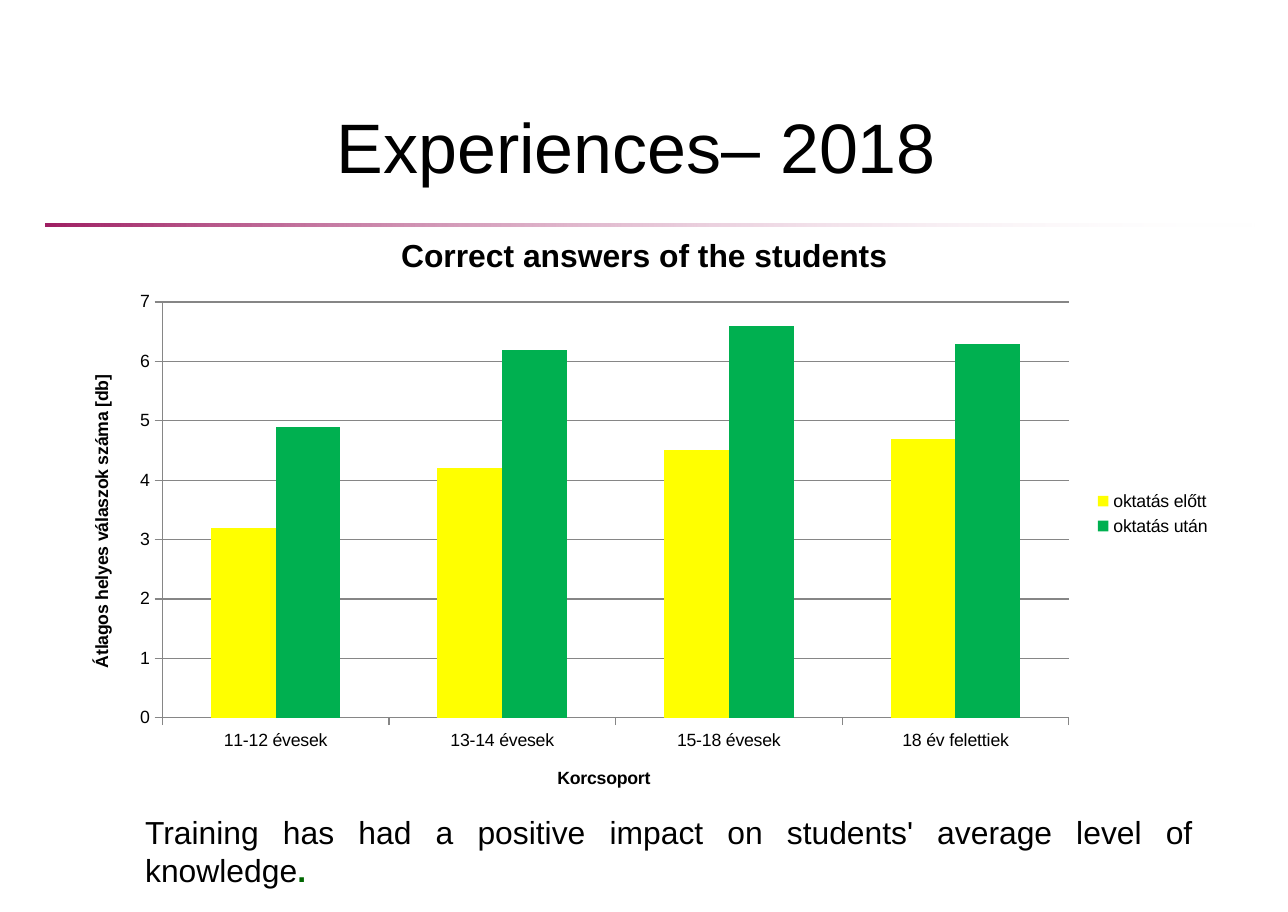
from lxml import etree
from pptx import Presentation
from pptx import util as u
from pptx.chart.data import CategoryChartData
from pptx.dml.color import RGBColor
from pptx.enum import chart as ch, shapes, text
from pptx.oxml.ns import qn

BLACK = RGBColor(0, 0, 0)
WHITE = RGBColor(255, 255, 255)
PLUM = RGBColor(0x9F, 0x1F, 0x63)
DARK_GREEN = RGBColor(0, 0x66, 0)
GREY = RGBColor(0x86, 0x86, 0x86)
YELLOW = RGBColor(255, 255, 0)
GREEN = RGBColor(0, 0xB0, 0x50)
FONT = "Arial"

# Content
TITLE = "Experiences– 2018"
CAPTION = "Training has had a positive impact on students' average level of knowledge"
CHART_TITLE = "Correct answers of the students"
AGE_TITLE = "Korcsoport"
SCORE_TITLE = "Átlagos helyes válaszok száma [db]"
AGES = ["11-12 évesek", "13-14 évesek", "15-18 évesek", "18 év felettiek"]
SERIES = [
    ("oktatás előtt", (3.2, 4.2, 4.5, 4.7), YELLOW),
    ("oktatás után", (4.9, 6.2, 6.6, 6.3), GREEN),
]

# Left, top, width, height as percent of the slide
TITLE_BOX = (2.57, 12.69, 93.68, 6.56)
RULE_BOX = (3.52, 24.55, 94.47, 0.32)
CHART_BOX = (5.04, 23.29, 90.02, 65.97)
CAPTION_BOX = (10.3, 88.4, 83.3, 9.9)

prs = Presentation()
prs.slide_width = u.Cm(25.7)
prs.slide_height = u.Cm(18.2)
s = prs.slides.add_slide(prs.slide_layouts[6])


def place(box):
    sizes = (prs.slide_width, prs.slide_height) * 2
    return [int(size * share / 100) for size, share in zip(sizes, box)]


def style(font, size, bold=False):
    font.name, font.size, font.bold = FONT, u.Pt(size), bold
    font.color.rgb = BLACK


def add_text(box, words, size, align, anchor):
    tf = s.shapes.add_textbox(*place(box)).text_frame
    tf.word_wrap = True
    tf.vertical_anchor = anchor
    p = tf.paragraphs[0]
    p.text = words
    p.alignment = align
    style(p.font, size)
    return p


def set_layout(parent, index, **shares):
    """Fix the place of a chart part, in percent of the chart."""
    for old in parent.findall(qn("c:layout")):
        parent.remove(old)
    layout = etree.Element(qn("c:layout"))
    manual = etree.SubElement(layout, qn("c:manualLayout"))
    if "w" in shares:
        etree.SubElement(manual, qn("c:layoutTarget")).set("val", "inner")
    for mode in ("xMode", "yMode"):
        etree.SubElement(manual, qn("c:" + mode)).set("val", "edge")
    for key, share in shares.items():
        etree.SubElement(manual, qn("c:" + key)).set("val", str(share / 100))
    parent.insert(index, layout)


def add_title(owner, words, size, x, y):
    owner.has_title = True
    title = owner.chart_title if hasattr(owner, "chart_title") else owner.axis_title
    p = title.text_frame.paragraphs[0]
    p.text = words
    style(p.font, size, True)
    set_layout(title._element, 1, x=x, y=y)


# Rule under the title, fading to transparent white
rule = s.shapes.add_shape(shapes.MSO_SHAPE.RECTANGLE, *place(RULE_BOX))
rule.shadow.inherit = False
rule.line.fill.background()
rule.fill.gradient()
rule.fill.gradient_angle = 180
for stop, color in zip(rule.fill.gradient_stops, (WHITE, PLUM)):
    stop.color.rgb = color
clear = rule._element.spPr.find(".//" + qn("a:srgbClr"))
etree.SubElement(clear, qn("a:alpha")).set("val", "0")

# Title
add_text(TITLE_BOX, TITLE, 39.6, text.PP_ALIGN.CENTER, text.MSO_ANCHOR.MIDDLE)

# Chart
data = CategoryChartData()
data.categories = AGES
for name, values, _ in SERIES:
    data.add_series(name, values)
chart = s.shapes.add_chart(
    ch.XL_CHART_TYPE.COLUMN_CLUSTERED, *place(CHART_BOX), data).chart
style(chart.font, 10)
plot = chart.plots[0]
plot.gap_width, plot.overlap, plot.vary_by_categories = 150, 0, False
for series, (_, _, color) in zip(plot.series, SERIES):
    series.format.fill.solid()
    series.format.fill.fore_color.rgb = color

ages, scores = chart.category_axis, chart.value_axis
scores.minimum_scale, scores.maximum_scale, scores.major_unit = 0, 7, 1
scores.has_major_gridlines = True
for axis in (ages, scores):
    axis.major_tick_mark = ch.XL_TICK_MARK.OUTSIDE
    axis.minor_tick_mark = ch.XL_TICK_MARK.NONE
for line in (ages.format.line, scores.format.line, scores.major_gridlines.format.line):
    line.color.rgb = GREY
    line.width = u.Pt(0.75)

add_title(chart, CHART_TITLE, 18, 28.5, 2.7)
add_title(ages, AGE_TITLE, 10, 42.2, 91.5)
add_title(scores, SCORE_TITLE, 10, 1.9, 26.5)
chart.has_legend = True
chart.legend.position = ch.XL_LEGEND_POSITION.RIGHT
chart.legend.include_in_layout = False
set_layout(chart.legend._element, 1, x=88.6, y=45.5)
plot_area = chart._chartSpace.find(".//" + qn("c:plotArea"))
set_layout(plot_area, 0, x=8.4, y=14.9, w=78.2, h=69.1)

# Caption with a green full stop
p = add_text(CAPTION_BOX, CAPTION, 18, text.PP_ALIGN.JUSTIFY, text.MSO_ANCHOR.TOP)
r = p.add_run()
r.text = "."
r.font.bold = True
r.font.color.rgb = DARK_GREEN

prs.save("out.pptx")
